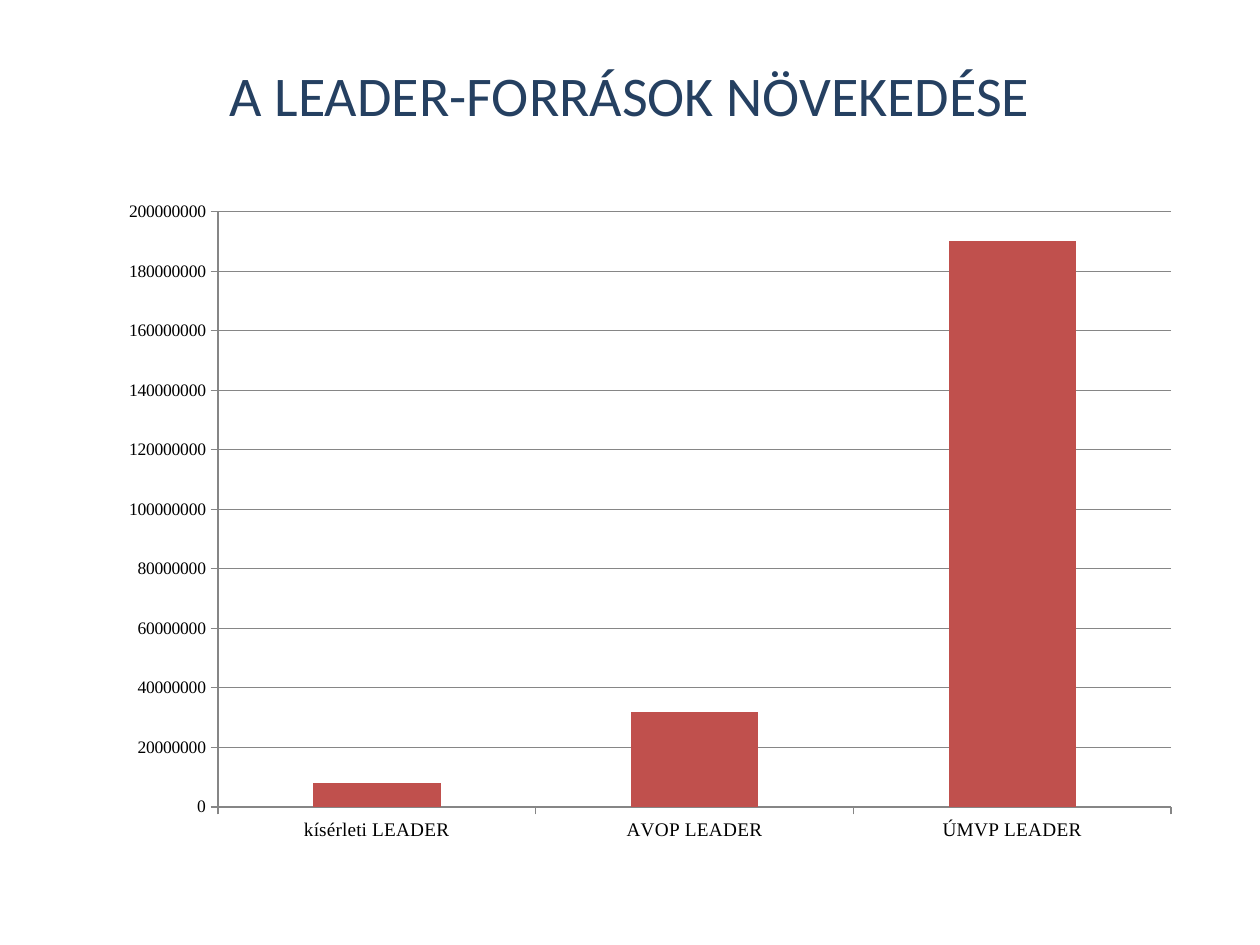
from lxml import etree
from pptx import Presentation
from pptx.chart.data import CategoryChartData
from pptx.dml.color import RGBColor
from pptx.enum.chart import XL_CHART_TYPE, XL_TICK_MARK
from pptx.enum.text import MSO_ANCHOR, PP_ALIGN
from pptx.oxml.ns import qn
from pptx.util import Inches, Pt

COLUMNS = XL_CHART_TYPE.COLUMN_CLUSTERED
TICK_OUTSIDE = XL_TICK_MARK.OUTSIDE
MIDDLE = MSO_ANCHOR.MIDDLE
CENTER = PP_ALIGN.CENTER

NAVY = RGBColor(0x25, 0x40, 0x61)
RED = RGBColor(0xC0, 0x50, 0x4D)
GRAY = RGBColor(0x86, 0x86, 0x86)
BLACK = RGBColor(0x00, 0x00, 0x00)

TITLE_FONT = "Calibri"
AXIS_FONT = "Times New Roman"
TITLE_ONLY = 5

FUNDING = {
    "kísérleti LEADER": 8_000_000,
    "AVOP LEADER": 32_000_000,
    "ÚMVP LEADER": 190_000_000,
}


def set_font(font, name=TITLE_FONT, size=18, color=BLACK):
    font.name = name
    font.size = Pt(size)
    font.color.rgb = color


def write_text(tf, text, align=CENTER, anchor=MIDDLE, **font_format):
    tf.word_wrap = True
    tf.vertical_anchor = anchor
    p = tf.paragraphs[0]
    p.alignment = align
    r = p.add_run()
    r.text = text
    set_font(r.font, **font_format)


def set_plot_layout(chart, x, y, w, h):
    """Fix the inner plot area, in shares of the chart's size."""
    plot_area = chart._chartSpace.chart.plotArea
    for old in plot_area.findall(qn("c:layout")):
        plot_area.remove(old)
    layout = etree.Element(qn("c:layout"))
    manual = etree.SubElement(layout, qn("c:manualLayout"))
    settings = {"layoutTarget": "inner", "xMode": "edge", "yMode": "edge",
                "x": x, "y": y, "w": w, "h": h}
    for tag, value in settings.items():
        etree.SubElement(manual, qn(f"c:{tag}")).set("val", str(value))
    plot_area.insert(0, layout)


class SlideBuilder:
    """Places elements by shares of the slide's size."""

    def __init__(self, prs):
        self.width, self.height = prs.slide_width, prs.slide_height
        self.slide = prs.slides.add_slide(prs.slide_layouts[TITLE_ONLY])

    def box(self, x, y, w, h):
        return (int(x * self.width), int(y * self.height),
                int(w * self.width), int(h * self.height))

    def title(self, text, *shares):
        sp = self.slide.shapes.title
        sp.left, sp.top, sp.width, sp.height = self.box(*shares)
        write_text(sp.text_frame, text, size=32, color=NAVY)

    def style_axis(self, axis, size):
        axis.major_tick_mark = TICK_OUTSIDE
        axis.format.line.color.rgb = GRAY
        axis.format.line.width = Pt(0.75)
        set_font(axis.tick_labels.font, name=AXIS_FONT, size=size)

    def column_chart(self, values, *shares):
        data = CategoryChartData(number_format="General")
        data.categories = list(values)
        data.add_series("Series 1", list(values.values()))
        chart = self.slide.shapes.add_chart(
            COLUMNS, *self.box(*shares), data).chart
        set_font(chart.font)
        chart.has_legend = False
        chart.has_title = False

        plot = chart.plots[0]
        plot.vary_by_categories = False
        plot.gap_width = 150
        fill = plot.series[0].format.fill
        fill.solid()
        fill.fore_color.rgb = RED

        self.style_axis(chart.category_axis, size=11)
        value_axis = chart.value_axis
        self.style_axis(value_axis, size=10)
        value_axis.minimum_scale = 0
        value_axis.maximum_scale = 200_000_000
        value_axis.major_unit = 20_000_000
        grid_line = value_axis.major_gridlines.format.line
        grid_line.color.rgb = GRAY
        grid_line.width = Pt(0.75)
        set_plot_layout(chart, 0.12, 0.02, 0.88, 0.9)


def main():
    prs = Presentation()
    prs.slide_width, prs.slide_height = Inches(10), Inches(7.5)
    s = SlideBuilder(prs)
    s.title("A LEADER-FORRÁSOK NÖVEKEDÉSE", 0.05, 0.04, 0.9, 0.12)
    s.column_chart(FUNDING, 0.07, 0.21, 0.86, 0.7)
    prs.save("out.pptx")


if __name__ == "__main__":
    main()
